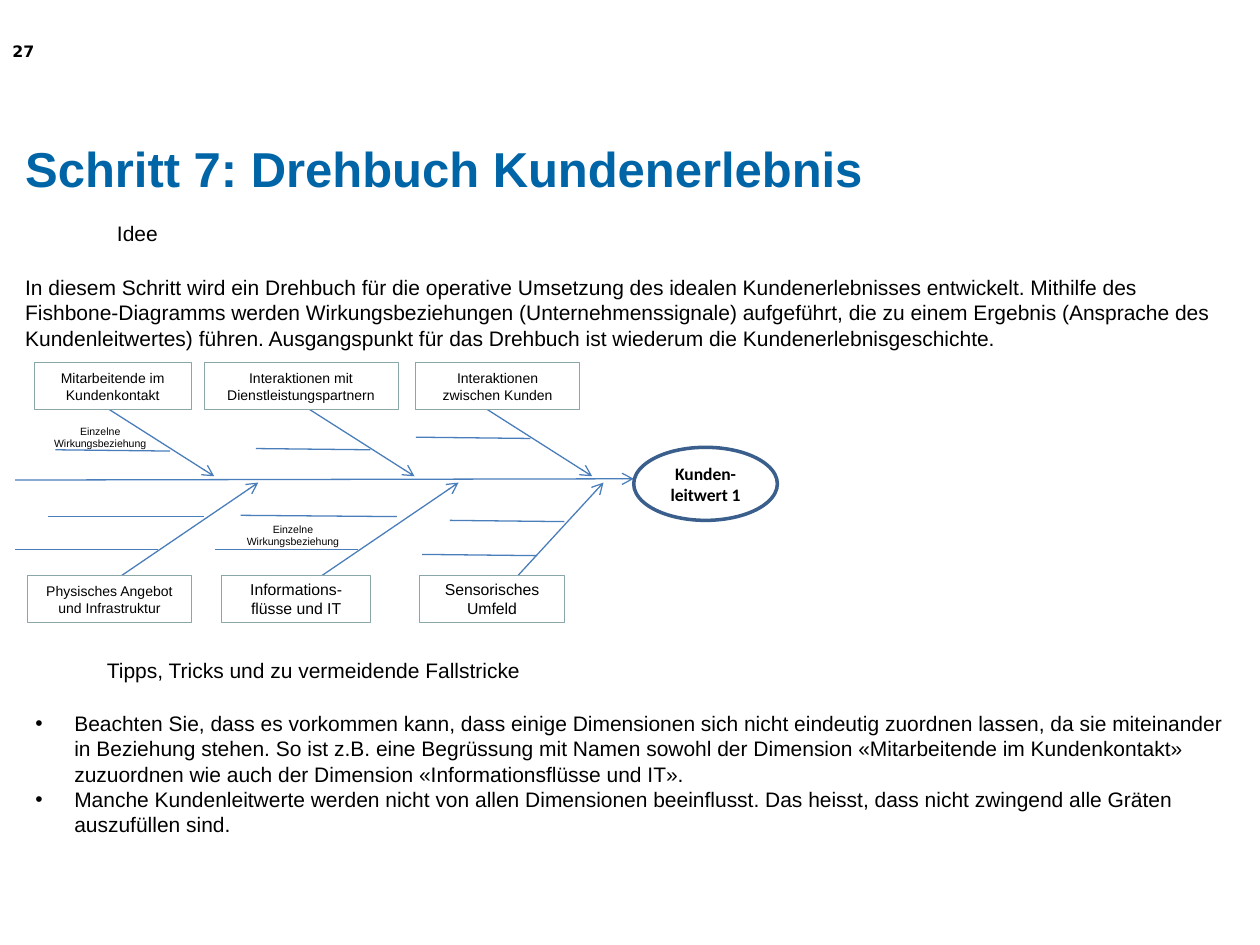
from lxml import etree
from pptx import Presentation
from pptx import util as u
from pptx.dml.color import RGBColor
from pptx.enum import shapes, text
from pptx.oxml.ns import qn

BLACK = RGBColor(0x00, 0x00, 0x00)
WHITE = RGBColor(0xFF, 0xFF, 0xFF)
TITLE_BLUE = RGBColor(0x00, 0x65, 0xA6)
BONE_BLUE = RGBColor(0x4A, 0x7E, 0xBB)
HEAD_BLUE = RGBColor(0x3A, 0x5F, 0x8C)
BOX_GREY = RGBColor(0x8A, 0xA6, 0xA8)

COLS, ROWS = 100, 75
BOX_H = 3.7
CENTER = text.PP_ALIGN.CENTER
MIDDLE = text.MSO_ANCHOR.MIDDLE

INTRO = ("In diesem Schritt wird ein Drehbuch für die operative Umsetzung des idealen "
         "Kundenerlebnisses entwickelt. Mithilfe des Fishbone-Diagramms werden "
         "Wirkungsbeziehungen (Unternehmenssignale) aufgeführt, die zu einem Ergebnis "
         "(Ansprache des Kundenleitwertes) führen. Ausgangspunkt für das Drehbuch ist "
         "wiederum die Kundenerlebnisgeschichte.")
TIPS = [
    "Beachten Sie, dass es vorkommen kann, dass einige Dimensionen sich nicht eindeutig "
    "zuordnen lassen, da sie miteinander in Beziehung stehen. So ist z.B. eine Begrüssung "
    "mit Namen sowohl der Dimension «Mitarbeitende im Kundenkontakt» zuzuordnen wie auch "
    "der Dimension «Informationsflüsse und IT».",
    "Manche Kundenleitwerte werden nicht von allen Dimensionen beeinflusst. Das heisst, "
    "dass nicht zwingend alle Gräten auszufüllen sind.",
]


class Deck:
    """Holds the style and current slide, placing elements on a 100 by 75 grid."""

    def __init__(self):
        self.prs = Presentation()
        self.prs.slide_width, self.prs.slide_height = u.Inches(10), u.Inches(7.5)
        self.s = self.prs.slides.add_slide(self.prs.slide_layouts[6])

    def grid(self, *lengths):
        units = (self.prs.slide_width / COLS, self.prs.slide_height / ROWS)
        return [u.Emu(round(v * units[i % 2])) for i, v in enumerate(lengths)]

    def add_text(self, sp, paragraphs, size, font="Arial", color=BLACK, bold=False,
                 align=None, anchor=None, bullet=False, inset=True, wrap=True):
        tf = sp.text_frame
        tf.word_wrap = wrap
        if anchor is not None:
            tf.vertical_anchor = anchor
        if not inset:
            tf.margin_left = tf.margin_right = tf.margin_top = tf.margin_bottom = 0
        for i, words in enumerate(paragraphs):
            p = tf.add_paragraph() if i else tf.paragraphs[0]
            if align is not None:
                p.alignment = align
            if bullet:
                pPr = p._p.get_or_add_pPr()
                pPr.set("marL", str(u.Inches(0.31)))
                pPr.set("indent", str(-u.Inches(0.31)))
                etree.SubElement(pPr, qn("a:buFont")).set("typeface", "Arial")
                etree.SubElement(pPr, qn("a:buChar")).set("char", "•")
            r = p.add_run()
            r.text = words
            r.font.name, r.font.size, r.font.bold = font, u.Pt(size), bold
            r.font.color.rgb = color

    def label(self, at, paragraphs, size, **style):
        self.add_text(self.s.shapes.add_textbox(*self.grid(*at)), paragraphs, size, **style)

    def shape(self, kind, at, words, size, line, width, fill=None, **style):
        sp = self.s.shapes.add_shape(kind, *self.grid(*at))
        sp.shadow.inherit = False
        if fill is None:
            sp.fill.background()
        else:
            sp.fill.solid()
            sp.fill.fore_color.rgb = fill
        sp.line.color.rgb, sp.line.width = line, u.Pt(width)
        self.add_text(sp, [words], size, align=CENTER, anchor=MIDDLE, **style)

    def box(self, x, y, w, words, size):
        self.shape(shapes.MSO_SHAPE.RECTANGLE, (x, y, w, BOX_H), words, size,
                   BOX_GREY, 0.5, fill=WHITE)

    def line(self, x, y, dx, dy, arrow=False):
        c = self.s.shapes.add_connector(shapes.MSO_CONNECTOR.STRAIGHT,
                                        *self.grid(x, y, x + dx, y + dy))
        c.line.color.rgb, c.line.width = BONE_BLUE, u.Pt(0.75)
        spPr = c._element.spPr
        if arrow:
            etree.SubElement(spPr.find(qn("a:ln")), qn("a:tailEnd")).set("type", "arrow")
        etree.SubElement(spPr, qn("a:effectLst"))


def main():
    d = Deck()
    d.label((2, 10.5, 96.1, 5.7), ["Schritt 7: Drehbuch Kundenerlebnis"], 28,
            color=TITLE_BLUE, bold=True, anchor=MIDDLE, inset=False)
    d.label((2, 21.8, 96.1, 6.3), [INTRO], 12, inset=False)
    d.label((0, 2.8, 7.9, 4.7), ["27"], 9, font="DejaVu Sans", bold=True)
    d.label((8.3, 17, 5.8, 3), ["Idee"], 12, wrap=False)
    d.label((7.5, 51.7, 35.1, 3), ["Tipps, Tricks und zu vermeidende Fallstricke"], 12,
            wrap=False)

    d.line(1.2, 38.1, 49.1, -0.1, arrow=True)
    d.shape(shapes.MSO_SHAPE.OVAL, (50.3, 35.5, 11.4, 5.8), "Kunden-leitwert 1", 10,
            HEAD_BLUE, 2, font="Calibri", bold=True)

    for x in (7.1, 23, 37.1):
        d.line(x, 31.5, 9.9, 6.3, arrow=True)
    for x, dx in ((5.8, 14.7), (21.7, 14.7), (38.7, 9.2)):
        d.line(x, 48.3, dx, -10, arrow=True)
    for x, y in ((13.5, 35.8), (29.4, 35.7), (42.1, 34.8), (44.8, 41.4), (42.6, 44.1)):
        d.line(x, y, -9.1, -0.1)
    for x in (0, 15.9):
        d.line(12.5 + x, 43.6, -11.3, 0)
    d.line(16.2, 41, -12.4, 0)
    d.line(31.5, 41, -12.4, -0.1)

    for x, w, words in ((2.7, 12.5, "Mitarbeitende im Kundenkontakt"),
                        (16.2, 15.4, "Interaktionen mit Dienstleistungspartnern"),
                        (33, 13, "Interaktionen zwischen Kunden")):
        d.box(x, 28.8, w, words, 8)
    for x, w, words, size in ((2.2, 13, "Physisches Angebot und Infrastruktur", 8),
                              (17.6, 11.8, "Informations-flüsse und IT", 9),
                              (33.3, 11.5, "Sensorisches Umfeld", 9)):
        d.box(x, 45.7, w, words, size)
    for x, y in ((2.2, 33.7), (17.5, 41.5)):
        d.label((x, y, 11.5, 2), ["Einzelne Wirkungsbeziehung"], 6,
                align=CENTER, anchor=MIDDLE)

    d.label((2.8, 56.4, 96.1, 11.8), TIPS, 12, bullet=True, inset=False)
    d.prs.save("out.pptx")


if __name__ == "__main__":
    main()
